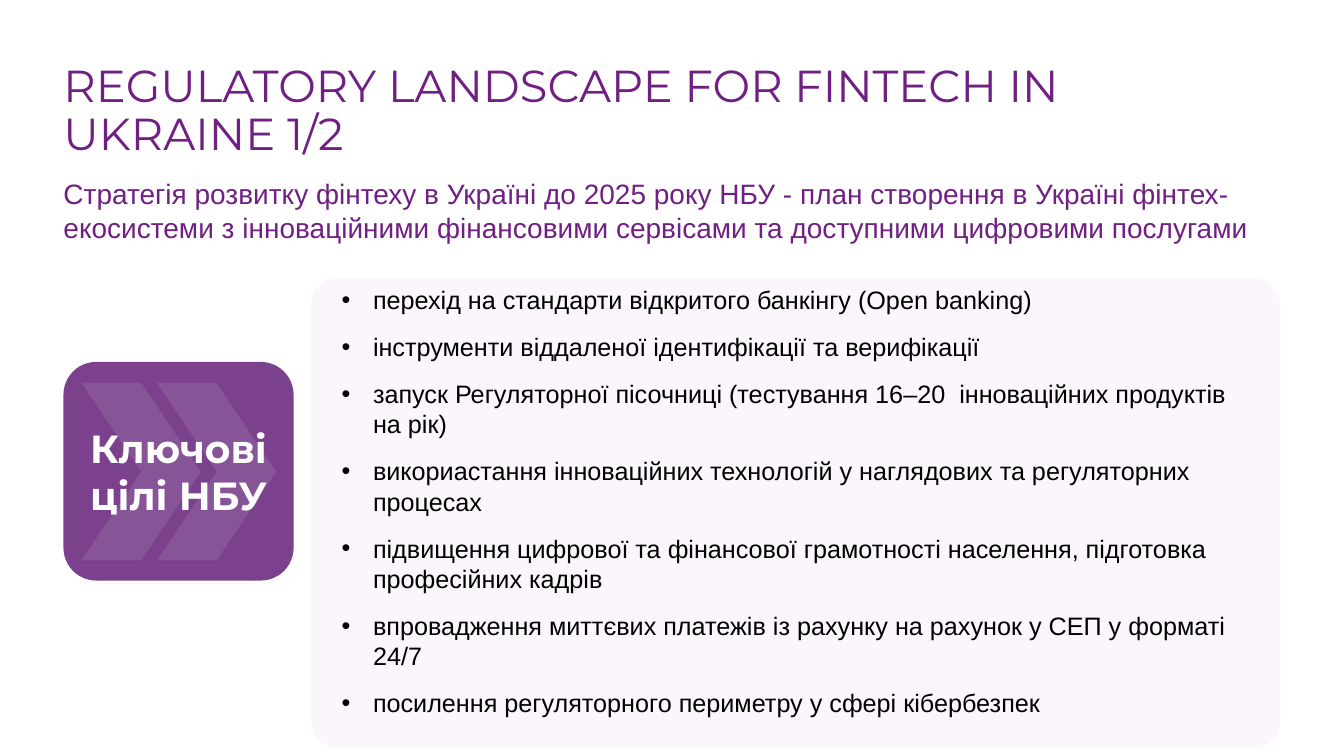
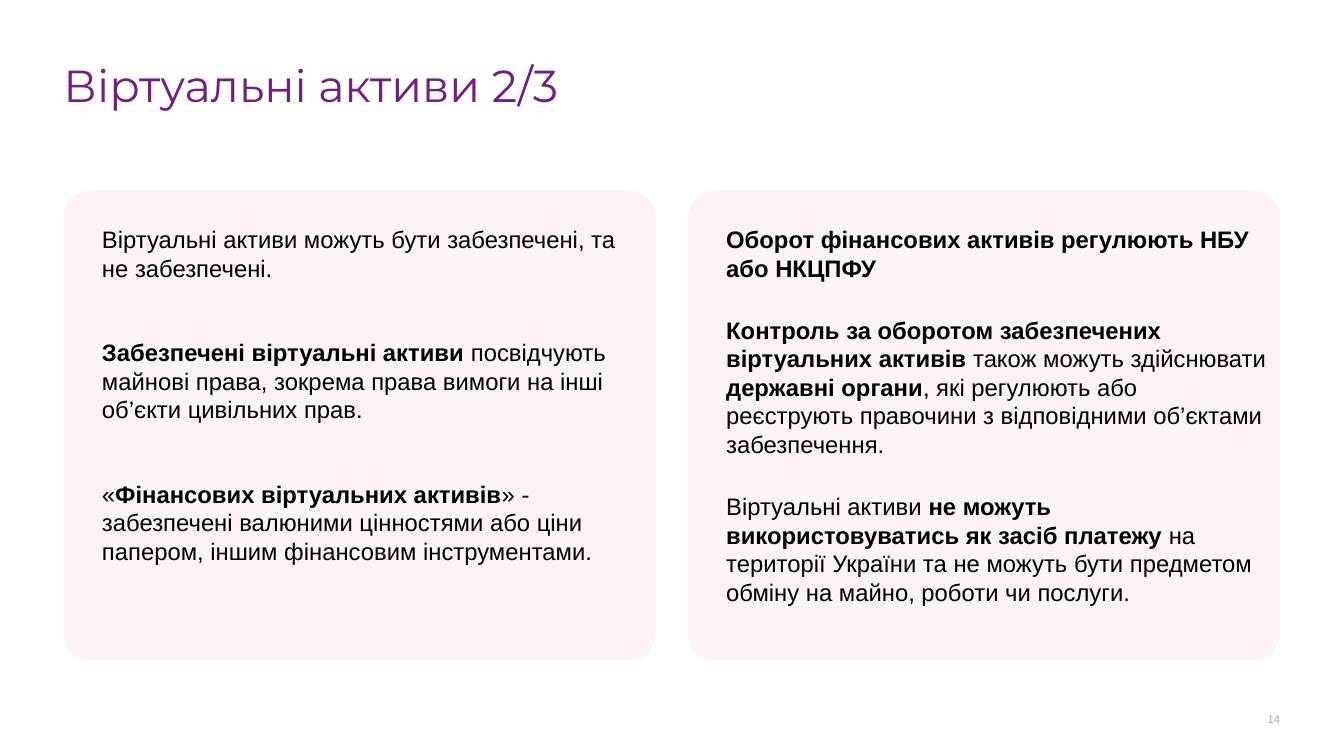
from pptx import Presentation
from pptx.dml.color import RGBColor
from pptx.enum.shapes import MSO_SHAPE
from pptx.enum.text import MSO_ANCHOR, MSO_AUTO_SIZE, PP_ALIGN
from pptx.oxml.ns import qn
from pptx.util import Cm, Pt
from lxml.etree import SubElement

# Shared palette, fonts and page grid (cm)
PURPLE, PLUM, LILAC, PINK = "702082", "7B418D", "A05EB5", "D00070"
BLACK, WHITE, GREY = "000000", "FFFFFF", "A8A2A2"
HEAD, BODY = "Montserrat", "Arial"
LEFT, WIDTH = 1.6, 30.66
RIGHT = LEFT + WIDTH
CARD_H, GAP = 11.84, 0.8


def rgb(value):
    return RGBColor.from_string(value)


def write(tf, paragraphs, size=18, font=BODY, color=BLACK, bold=False,
          align=PP_ALIGN.LEFT, after=0, line=1.0, bullet=False,
          anchor=MSO_ANCHOR.TOP, inset=0):
    """Fill a text frame; text between ** marks is bold."""
    tf.word_wrap = True
    tf.auto_size = MSO_AUTO_SIZE.NONE
    tf.vertical_anchor = anchor
    tf.margin_left = tf.margin_right = Cm(inset)
    tf.margin_top = tf.margin_bottom = Cm(inset)
    for i, text in enumerate(paragraphs):
        p = tf.add_paragraph() if i else tf.paragraphs[0]
        p.alignment, p.line_spacing = align, line
        p.space_before, p.space_after = Pt(0), Pt(after)
        # Bullet and hanging indent
        pPr = p._p.get_or_add_pPr()
        indent = Cm(0.79) if bullet else 0
        pPr.set("marL", str(indent))
        pPr.set("indent", str(-indent))
        if bullet:
            SubElement(pPr, qn("a:buChar")).set("char", "•")
        else:
            SubElement(pPr, qn("a:buNone"))
        for j, part in enumerate(text.split("**")):
            if part:
                r = p.add_run()
                r.text = part
                r.font.size, r.font.name = Pt(size), font
                r.font.bold = bold or j % 2 == 1
                r.font.color.rgb = rgb(color)


class Deck:
    def __init__(self):
        self.prs = Presentation()
        self.prs.slide_width, self.prs.slide_height = Cm(33.87), Cm(19.05)
        self.s = None

    def slide(self, layout, title):
        self.s = self.prs.slides.add_slide(self.prs.slide_layouts[layout])
        self.placeholder(0, LEFT, 1.6, WIDTH, 3.18, [title],
                         size=32, font=HEAD, color=PURPLE, line=0.9)

    def placeholder(self, idx, x, y, w, h, paragraphs, **style):
        sp = self.s.placeholders[idx]
        sp.left, sp.top, sp.width, sp.height = Cm(x), Cm(y), Cm(w), Cm(h)
        write(sp.text_frame, paragraphs, **style)

    def text(self, x, y, w, h, paragraphs, **style):
        sp = self.s.shapes.add_textbox(Cm(x), Cm(y), Cm(w), Cm(h))
        write(sp.text_frame, paragraphs, **style)

    def shape(self, kind, x, y, w, h, color, opacity=100, adj=None):
        sp = self.s.shapes.add_shape(kind, Cm(x), Cm(y), Cm(w), Cm(h))
        sp.shadow.inherit = False
        sp.line.fill.background()
        sp.fill.solid()
        sp.fill.fore_color.rgb = rgb(color)
        if opacity < 100:
            clr = sp.element.spPr.find(".//" + qn("a:srgbClr"))
            SubElement(clr, qn("a:alpha")).set("val", str(opacity * 1000))
        if adj is not None:
            sp.adjustments[0] = adj
        return sp

    def card(self, x, y, w, color):
        sp = self.shape(MSO_SHAPE.ROUNDED_RECTANGLE, x, y, w, CARD_H,
                        color, opacity=5, adj=0.057)
        # Send behind the placeholders
        sp.element.getparent().insert(2, sp.element)

    def badge(self, x, y, w, h, lines):
        sp = self.shape(MSO_SHAPE.ROUNDED_RECTANGLE, x, y, w, h, PLUM, adj=0.15)
        write(sp.text_frame, lines, size=28, font=HEAD, color=WHITE, bold=True,
              align=PP_ALIGN.CENTER, anchor=MSO_ANCHOR.MIDDLE, inset=0.1)
        for dx in (2.36, 0.46):
            self.shape(MSO_SHAPE.CHEVRON, x + dx, y + 0.53, 3, 4.47,
                       WHITE, opacity=10)

    def page_number(self, number):
        self.text(RIGHT - 1.83, 17.96, 1.83, 0.5, [str(number)],
                  size=8, color=GREY, align=PP_ALIGN.RIGHT)


def main():
    deck = Deck()

    # Slide 1: strategy goals
    deck.slide(1, "REGULATORY LANDSCAPE FOR FINTECH IN UKRAINE 1/2")
    deck.card(7.85, 7.01, RIGHT - 7.85, LILAC)
    deck.placeholder(1, 8.51, 7.01, 22.83, 11.23, [
        "перехід на стандарти відкритого банкінгу (Open banking)",
        "інструменти віддаленої ідентифікації та верифікації",
        "запуск Регуляторної пісочниці (тестування 16–20  інноваційних продуктів на рік)",
        "викориaстання інноваційних технологій у наглядових та регуляторних процесах",
        "підвищення цифрової та фінансової грамотності населення, підготовка професійних кадрів",
        "впровадження миттєвих платежів із рахунку на рахунок у СЕП у форматі 24/7",
        "посилення регуляторного периметру у сфері кібербезпек",
    ], after=12, bullet=True, anchor=MSO_ANCHOR.MIDDLE, inset=0.1)
    deck.badge(LEFT, 9.12, 5.8, 5.51, ["Ключові", "цілі НБУ"])
    deck.text(LEFT, 4.45, WIDTH, 1.7, [
        "Стратегія розвитку фінтеху в Україні до 2025 року НБУ - план створення "
        "в Україні фінтех-екосистеми з інноваційними фінансовими сервісами "
        "та доступними цифровими послугами"], size=20, color=PURPLE)

    # Slide 2: virtual assets in two columns
    deck.slide(3, "Віртуальні активи 2/3")
    columns = [
        (13, 40, [
            "Віртуальні активи можуть бути забезпечені, та не забезпечені.",
            "**Забезпечені віртуальні активи** посвідчують майнові права, "
            "зокрема права вимоги на інші об’єкти цивільних прав.",
            "«**Фінансових віртуальних активів**» - забезпечені валюними "
            "цінностями або ціни папером, іншим фінансовим інструментами."]),
        (13.67, 24, [
            "**Оборот фінансових активів регулюють НБУ або НКЦПФУ**",
            "**Контроль за оборотом забезпечених віртуальних активів** також "
            "можуть здійснювати **державні органи**, які регулюють або "
            "реєструють правочини з відповідними об’єктами забезпечення.",
            "Віртуальні активи **не можуть використовуватись як засіб платежу** "
            "на території України та не можуть бути предметом обміну на майно, "
            "роботи чи послуги."]),
    ]
    card_w = (WIDTH - GAP) / 2
    for i, (text_w, after, paragraphs) in enumerate(columns):
        x = LEFT + i * (card_w + GAP)
        deck.card(x, 4.8, card_w, PINK)
        deck.placeholder(i + 1, x + 0.97, 5.66, text_w, 10.6, paragraphs,
                         size=17, after=after)
    deck.page_number(14)

    deck.prs.save("out.pptx")


if __name__ == "__main__":
    main()
